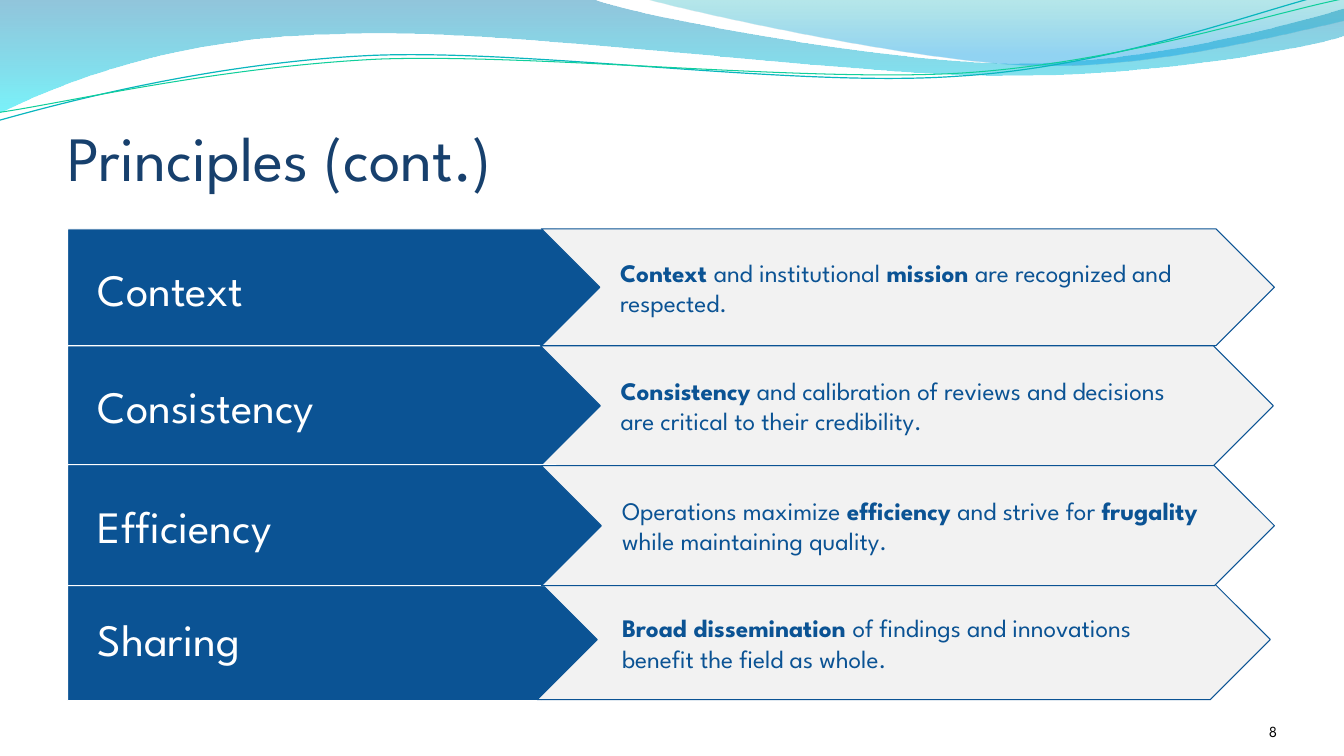
"""Builds the slide of review principles as four rows of arrows under a wave band."""
from lxml import etree
from pptx import Presentation
from pptx.dml.color import RGBColor
from pptx.enum import shapes, text
from pptx.oxml.ns import qn
from pptx.util import Inches, Pt

FONT = "League Spartan"
BLUE = RGBColor(0x0B, 0x53, 0x94)
NAVY = RGBColor(0x17, 0x40, 0x6D)
GREY = RGBColor(0xF2, 0xF2, 0xF2)
WHITE = RGBColor(0xFF, 0xFF, 0xFF)
BLACK = RGBColor(0x00, 0x00, 0x00)
STEEL = RGBColor(0x00, 0x79, 0xAD)
CYAN = RGBColor(0x00, 0xE9, 0xF7)
AQUA = RGBColor(0x00, 0xAB, 0xB4)
SKY = RGBColor(0x00, 0x99, 0xE4)
TEAL = RGBColor(0x09, 0xB6, 0xBE)
GREEN = RGBColor(0x10, 0xCF, 0x9B)


def trace(start, steps, closed):
    """Draws a path of lines (x, y) and cubic curves (x1, y1, x2, y2, x, y)."""
    pen = slide.shapes.build_freeform(Inches(start[0]), Inches(start[1]))
    for step in steps:
        dots = zip(step[::2], step[1::2])
        pen.add_line_segments([(Inches(x), Inches(y)) for x, y in dots], close=False)
    wave = pen.convert_to_shape()
    wave.shadow.inherit = False
    path = next(wave.element.iter(qn("a:path")))
    lines = iter(path.findall(qn("a:lnTo")))
    for step in steps:
        parts = [next(lines) for _ in step[::2]]
        if len(parts) == 3:
            curve = etree.Element(qn("a:cubicBezTo"))
            parts[0].addprevious(curve)
            for part in parts:
                curve.append(part[0])
                path.remove(part)
    if closed:
        etree.SubElement(path, qn("a:close"))
    return wave


def write(shape, runs, size, color, inset, anchor):
    """Sets the runs (words, bold) and the frame of a shape."""
    frame = shape.text_frame
    frame.word_wrap = True
    frame.auto_size = text.MSO_AUTO_SIZE.NONE
    frame.vertical_anchor = anchor
    frame.margin_left, frame.margin_top, frame.margin_right, frame.margin_bottom = map(Inches, inset)
    para = frame.paragraphs[0]
    para.alignment = text.PP_ALIGN.LEFT
    for words, bold in runs:
        run = para.add_run()
        run.text = words
        run.font.name = FONT
        run.font.size = Pt(size)
        run.font.bold = bold
        run.font.color.rgb = color
    return para


deck = Presentation()
deck.slide_width, deck.slide_height = Inches(13.33), Inches(7.5)
slide = deck.slides.add_slide(deck.slide_layouts[5])
TOP, MID, LOW = text.MSO_ANCHOR.TOP, text.MSO_ANCHOR.MIDDLE, text.MSO_ANCHOR.BOTTOM

bands = [
    ((0, 0), [(5.87, -0.01), (6.34, 0.17, 8.84, 0.63, 10.11, 0.63),
              (11.37, 0.63, 12.77, 0.26, 13.33, 0.09), (13.34, 0.36),
              (13.11, 0.44, 11.59, 0.76, 9.94, 0.75), (8.29, 0.75, 5.09, 0.28, 3.43, 0.34),
              (1.72, 0.36, 0.61, 0.83, -0.02, 1.13), (0, 0)],
     [(0, STEEL, 43), (1, CYAN, 53)]),
    ((6.38, -0.01), [(6.79, 0.11, 9.09, 0.62, 10.25, 0.65),
                     (11.4, 0.69, 12.82, 0.32, 13.33, 0.21), (13.33, 0), (6.38, -0.01)],
     [(0, AQUA, 28), (0.8, SKY, 43)]),
]
for start, steps, stops in bands:
    band = trace(start, steps, True)
    band.line.fill.background()
    band.fill.gradient()
    band.fill.gradient_angle = 270
    for stop, (place, color, _) in zip(band.fill.gradient_stops, stops):
        stop.position = place
        stop.color.rgb = color
    tints = band.element.spPr.find(qn("a:gradFill")).iter(qn("a:srgbClr"))
    for tint, (_, _, alpha) in zip(tints, stops):
        etree.SubElement(tint, qn("a:alpha")).set("val", str(alpha * 1000))

threads = [
    ((-0.03, 0.88), [(0.62, 0.73, 2.1, 0.41, 3.69, 0.41), (5.28, 0.42, 7.87, 0.93, 9.48, 0.89),
                     (11.09, 0.87, 12.53, 0.36, 13.33, 0.22)], TEAL, 0.85),
    ((-0.02, 0.8), [(0.61, 0.74, 2.18, 0.45, 3.77, 0.45), (5.37, 0.47, 7.95, 0.88, 9.54, 0.86),
                    (11.13, 0.83, 12.56, 0.42, 13.36, 0.3)], GREEN, 0.75),
]
for start, steps, color, width in threads:
    thread = trace(start, steps, False)
    thread.rotation = 357.3
    thread.fill.background()
    thread.line.color.rgb = color
    thread.line.width = Pt(width)

title = slide.shapes.title
title.left, title.top, title.width, title.height = map(Inches, (0.67, 0.77, 12.11, 1.16))
write(title, [("Principles (cont.)", False)], 45, NAVY, (0, 0.05, 0, 0), LOW)

page = slide.shapes.add_textbox(*map(Inches, (11.56, 6.95, 1.11, 0.4)))
write(page, [("8", False)], 11, BLACK, (0, 0, 0, 0), LOW).alignment = text.PP_ALIGN.RIGHT

rows = [
    ("Sharing", (0.67, 5.72, 5.31, 1.23), (5.33, 5.75, 7.27, 1.19), 0, (6.17, 6.03, 5.23, 0.71),
     [("Broad dissemination ", True),
      ("of findings and innovations benefit the field as whole.", False)]),
    ("Context", (0.67, 2.27, 5.44, 1.18), (5.37, 2.27, 7.27, 1.16), 0.2, None,
     [("Context ", True), ("and institutional ", False), ("mission ", True),
      ("are recognized and respected.", False)]),
    ("Consistency", (0.67, 3.43, 5.44, 1.18), (5.36, 3.43, 7.27, 1.19), 0.4, None,
     [("Consistency", True),
      (" and calibration of reviews and decisions are critical to their credibility.", False)]),
    ("Efficiency", (0.67, 4.61, 5.44, 1.2), (5.37, 4.62, 7.27, 1.19), 0, (6.17, 4.86, 5.87, 0.71),
     [("Operations maximize ", False), ("efficiency ", True), ("and strive for ", False),
      ("frugality", True), (" while maintaining quality.", False)]),
]
for name, left, right, gap, note, runs in rows:
    tag = slide.shapes.add_shape(shapes.MSO_SHAPE.PENTAGON, *map(Inches, left))
    arrow = slide.shapes.add_shape(shapes.MSO_SHAPE.CHEVRON, *map(Inches, right))
    for shape, fill, edge in ((tag, BLUE, WHITE), (arrow, GREY, BLUE)):
        shape.shadow.inherit = False
        shape.fill.solid()
        shape.fill.fore_color.rgb = fill
        shape.line.color.rgb = edge
        shape.line.width = Pt(0.75)
    write(tag, [(name, False)], 32, WHITE, (0.3, 0.05, 0.1, 0.05), MID)
    if note:
        box = slide.shapes.add_textbox(*map(Inches, note))
        write(box, runs, 18, BLUE, (0, 0.05, 0.1, 0.05), TOP)
    else:
        write(arrow, runs, 18, BLUE, (0.2, 0.05, gap, 0.05), MID)

deck.save("out.pptx")
